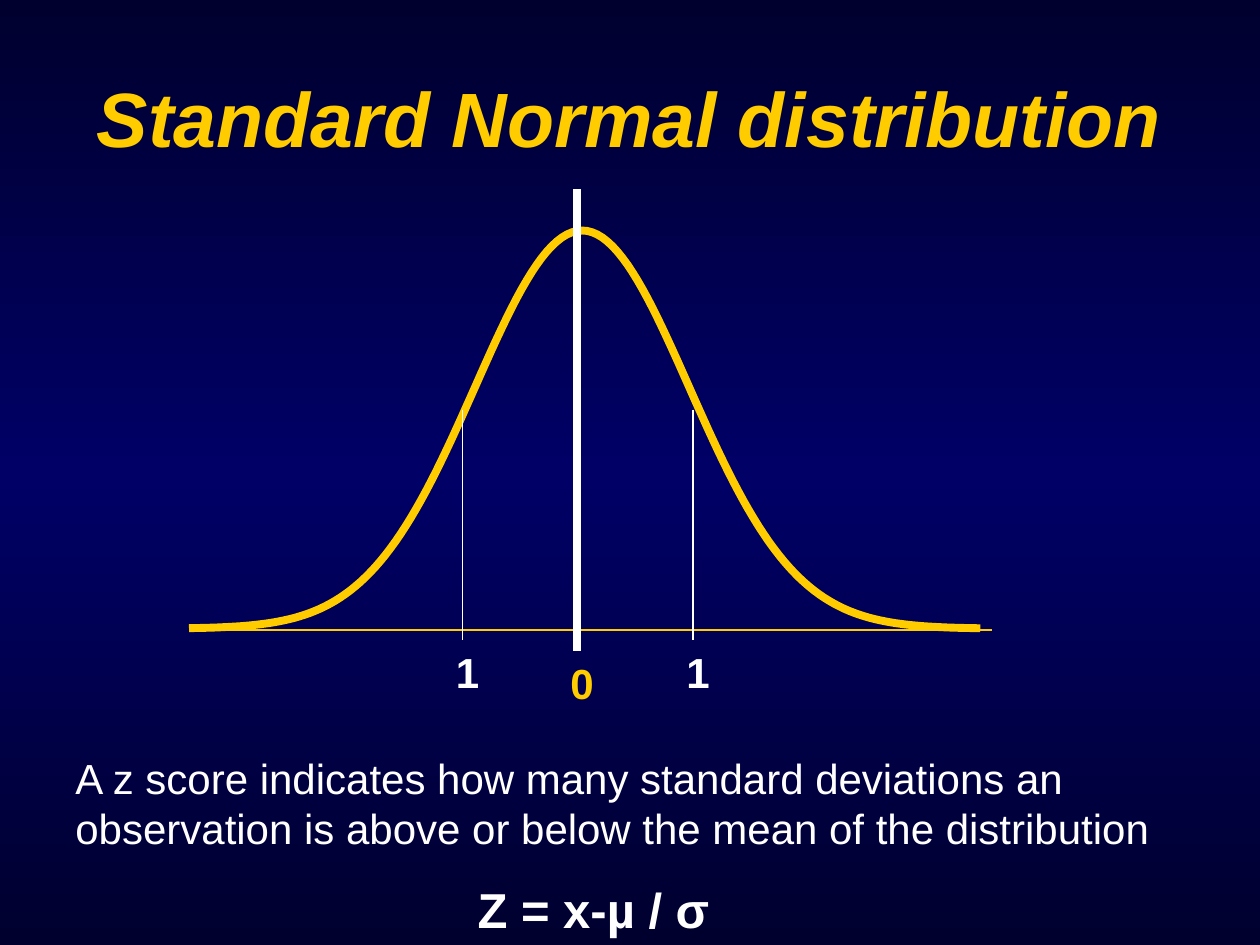
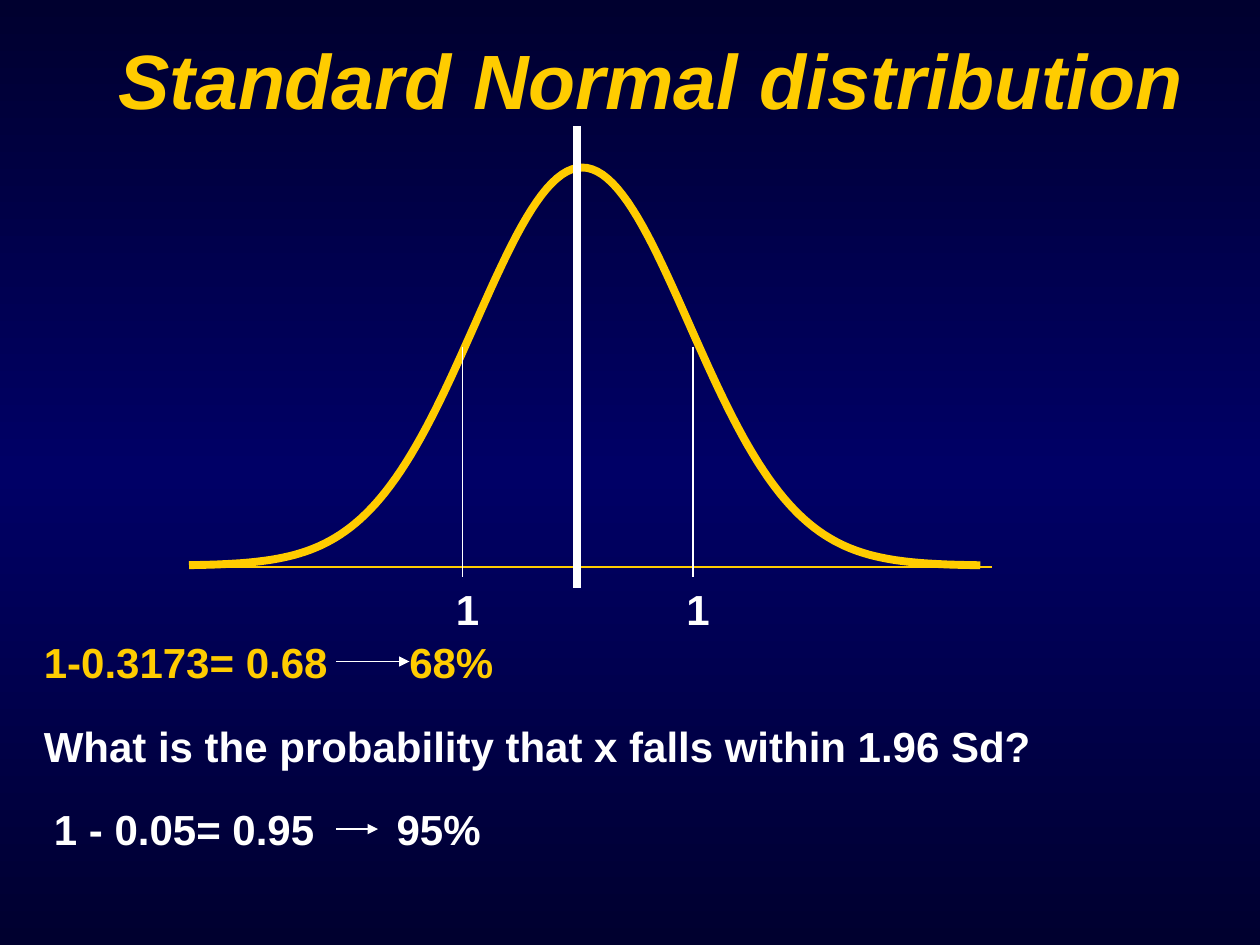
"""Build two slides on the standard normal distribution and z scores."""
from math import exp

from lxml import etree
from copy import deepcopy
from pptx import Presentation
from pptx.dml.color import RGBColor
from pptx.enum import shapes, text
from pptx.oxml import ns
from pptx.util import Inches, Pt

NIGHT = RGBColor(0x00, 0x00, 0x2F)
NAVY = RGBColor(0x00, 0x00, 0x66)
GOLD = RGBColor(0xFF, 0xCC, 0x00)
WHITE = RGBColor(0xFF, 0xFF, 0xFF)
FONT = "Arial"
LEFT, CENTER = text.PP_ALIGN.LEFT, text.PP_ALIGN.CENTER
MEAN, SIGMA, PEAK = 4.62, 0.85, 3.16
CURVE_START, CURVE_STEP, CURVE_STEPS = 1.5, 0.04, 157


def add_text(slide, words, box, size=24, color=WHITE, bold=True, italic=False,
             align=LEFT, anchor=text.MSO_ANCHOR.TOP, tab=None):
    frame = slide.shapes.add_textbox(*map(Inches, box)).text_frame
    frame.word_wrap = True
    frame.vertical_anchor = anchor
    paragraph = frame.paragraphs[0]
    paragraph.text = words
    paragraph.alignment = align
    if tab:
        stops = etree.SubElement(paragraph._p.get_or_add_pPr(), ns.qn("a:tabLst"))
        etree.SubElement(stops, ns.qn("a:tab"), pos=str(Inches(tab)), algn="l")
    font = paragraph.font
    font.name, font.size, font.bold, font.italic = FONT, Pt(size), bold, italic
    font.color.rgb = color


def add_line(slide, x1, y1, x2, y2, color=WHITE, width=0.75, arrow=False):
    line = slide.shapes.add_connector(
        shapes.MSO_CONNECTOR.STRAIGHT, *map(Inches, (x1, y1, x2, y2)))
    line.line.color.rgb = color
    line.line.width = Pt(width)
    if arrow:
        etree.SubElement(line.line._get_or_add_ln(), ns.qn("a:tailEnd"), type="triangle")
    etree.SubElement(line._element.spPr, ns.qn("a:effectLst"))


prs = Presentation()
prs.slide_width, prs.slide_height = Inches(10), Inches(7.5)

slides = []
for title_left, title_top, axis in ((0.5, 0.3, 5), (0.67, 0, 4.5)):
    slide = prs.slides.add_slide(prs.slide_layouts[6])
    slides.append(slide)

    backdrop = slide.background.fill
    backdrop.gradient()
    backdrop.gradient_angle = 270
    stop_list = next(slide.element.iter(ns.qn("a:gsLst")))
    stop_list.append(deepcopy(stop_list[-1]))
    for stop, position, color in zip(backdrop.gradient_stops, (0, 0.5, 1), (NIGHT, NAVY, NIGHT)):
        stop.position = position
        stop.color.rgb = color

    add_text(slide, "Standard Normal distribution", (title_left, title_top, 9, 1.25),
             size=44, color=GOLD, italic=True, align=CENTER, anchor=text.MSO_ANCHOR.MIDDLE)
    add_line(slide, 1.58, axis, 7.87, axis, GOLD, 1.37)

    points = []
    for step in range(CURVE_STEPS + 1):
        x = CURVE_START + step * CURVE_STEP
        density = exp(-((x - MEAN) / SIGMA) ** 2 / 2)
        points.append((Inches(x), Inches(axis - 0.01 - PEAK * density)))
    outline = slide.shapes.build_freeform(*points[0])
    outline.add_line_segments(points[1:], close=False)
    bell = outline.convert_to_shape()
    bell.shadow.inherit = False
    bell.fill.background()
    bell.line.color.rgb = GOLD
    bell.line.width = Pt(4.5)

    add_line(slide, 4.58, axis - 3.5, 4.58, axis + 0.17, width=4.5)
    for deviation in (3.67, 5.5):
        add_line(slide, deviation, axis - 1.75, deviation, axis + 0.08)
        add_text(slide, "1", (deviation - 0.5, axis + 0.08, 1.08, 0.5), align=CENTER)

z_score, probability = slides

add_text(z_score, "0", (4.08, 5.17, 1.08, 0.5), color=GOLD, align=CENTER)
add_text(z_score, "A z score indicates how many standard deviations an observation "
         "is above or below the mean of the distribution", (0.5, 5.92, 8.92, 0.9), bold=False)
add_text(z_score, "Z = x-µ / σ", (1.5, 6.93, 6.42, 0.57), size=28, align=CENTER)

add_text(probability, "1-0.3173= 0.68\t68%", (0.25, 5, 9.17, 0.5), color=GOLD, tab=2.9)
add_text(probability, "What is the probability that x falls within 1.96 Sd?",
         (0.25, 5.67, 8.5, 0.5))
add_text(probability, "1 - 0.05= 0.95\t95%", (0.33, 6.33, 4.67, 0.5), tab=2.72)
for arrow_end, arrow_y in ((3.25, 5.25), (3, 6.58)):
    add_line(probability, 2.67, arrow_y, arrow_end, arrow_y, arrow=True)

prs.save("out.pptx")
